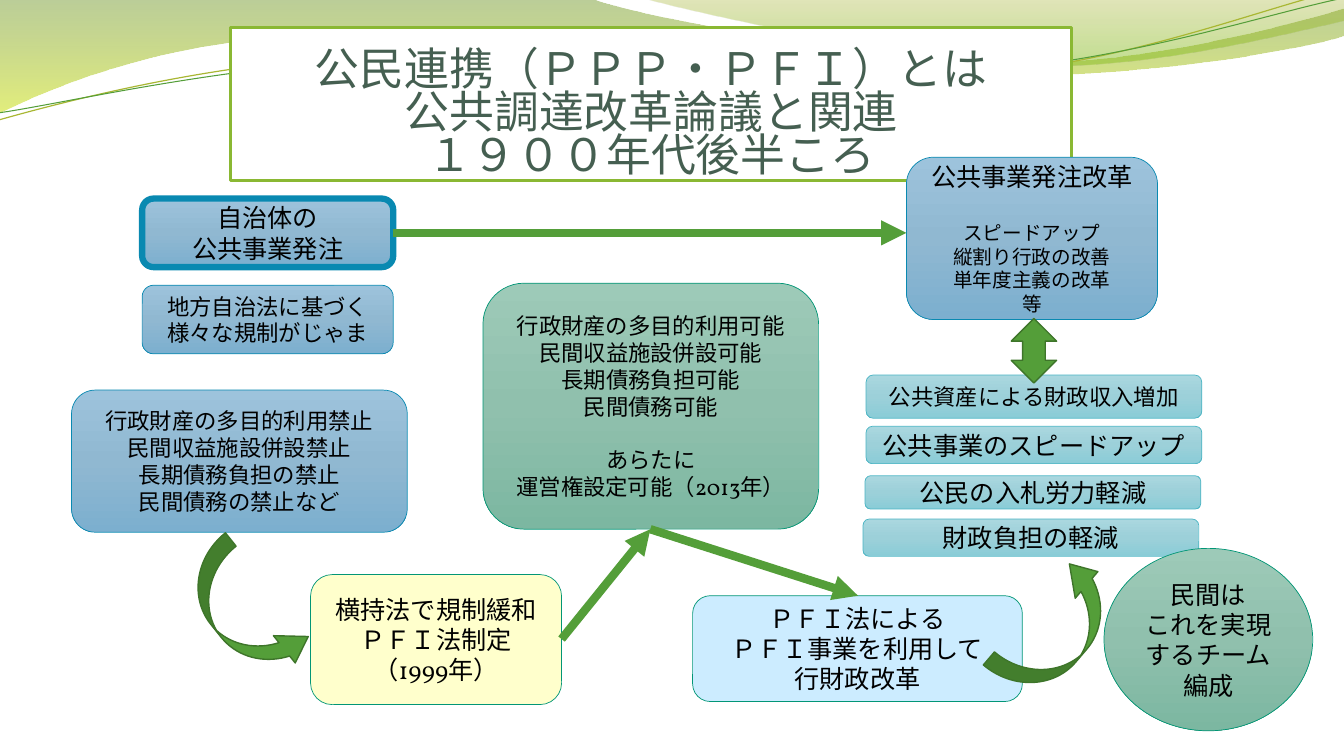
from math import cos, radians, sin

from lxml.etree import SubElement
from pptx import Presentation
from pptx.dml.color import RGBColor
from pptx.enum.shapes import MSO_CONNECTOR, MSO_SHAPE as Shape
from pptx.enum.text import MSO_ANCHOR as Anchor, PP_ALIGN as Align
from pptx.oxml.ns import qn
from pptx.util import Inches, Pt

COLORS = {
    "black": "000000", "white": "FFFFFF", "title": "455F51", "lime": "8AB833",
    "blue": "0989B1", "teal": "029676", "aqua": "4AB5C4", "yellow": "FFFFCC",
    "sky": "CCECFF", "arrow": "549E39", "arrow edge": "3E752A", "olive": "A9B733",
}
# Gradient stops: position %, colour, opacity %
GRADIENTS = {
    "blue fade": [(0, "9DC3DC", 100), (50, "90B8D1", 100), (100, "7CAFCF", 100)],
    "green fade": [(0, "9DCAB8", 100), (50, "90C0AD", 100), (100, "7CB7A1", 100)],
    "aqua fade": [(0, "AAD7DF", 100), (50, "9CD0D9", 100), (100, "8ACCD7", 100)],
    "wave": [(0, "69921C", 45), (100, "CCE10F", 55)],
    "right wave": [(0, "9BAA1A", 30), (80, "81BA16", 45)],
}
BODY_FONT, CJK_FONT = "Vollkorn", "Noto Sans CJK JP"
LINE_PITCH = 1.2

# Decoration: fill, line, line width, tilt, centre, start, then moves
# (one point is a straight edge, three points are a curve)
WAVES = [
    ("wave", None, 0, 0, (6.66, 0.56), (0, 0), [
        [(5.87, -0.01)], [(6.34, 0.17), (8.84, 0.63), (10.11, 0.63)],
        [(11.37, 0.63), (12.77, 0.26), (13.33, 0.09)], [(13.34, 0.36)],
        [(13.11, 0.44), (11.59, 0.76), (9.94, 0.75)],
        [(8.29, 0.75), (5.09, 0.28), (3.43, 0.34)],
        [(1.72, 0.36), (0.61, 0.83), (-0.02, 1.13)]]),
    ("right wave", None, 0, 0, (9.85, 0.34), (6.38, -0.01), [
        [(6.79, 0.11), (9.09, 0.62), (10.25, 0.65)],
        [(11.4, 0.69), (12.82, 0.32), (13.33, 0.21)], [(13.33, 0)]]),
    (None, "olive", 0.85, -2.7, (6.65, 0.58), (-0.01, 1.19), [
        [(0.63, 1.01), (2.1, 0.62), (3.69, 0.55)],
        [(5.27, 0.48), (7.89, 0.87), (9.49, 0.76)],
        [(11.1, 0.66), (12.51, 0.08), (13.3, -0.1)]]),
    (None, "arrow", 0.75, -2.7, (6.67, 0.59), (-0.01, 1.12), [
        [(0.62, 1.03), (2.18, 0.66), (3.77, 0.59)],
        [(5.37, 0.53), (7.96, 0.82), (9.55, 0.72)],
        [(11.14, 0.62), (12.55, 0.14), (13.33, -0.02)]]),
]
TITLE = "公民連携（ＰＰＰ・ＰＦＩ）とは\v公共調達改革論議と関連\v１９００年代後半ころ"

# Boxes: place, fill, line, line width, groups of (size, lines, space before)
BOXES = [
    ((1.41, 1.97, 2.49, 0.68), "blue fade", "blue", 4.5,
     [(18, ["自治体の", "公共事業発注"], 0)]),
    ((1.41, 2.83, 2.49, 0.68), "blue fade", "blue", 0.5,
     [(16, ["地方自治法に基づく", "様々な規制がじゃま"], 0)]),
    ((0.71, 3.87, 3.33, 1.41), "blue fade", "blue", 0.5,
     [(16, ["行政財産の多目的利用禁止", "民間収益施設併設禁止",
            "長期債務負担の禁止", "民間債務の禁止など"], 0)]),
    ((3.08, 5.7, 2.49, 1.29), "yellow", "teal", 0.5,
     [(18, ["横持法で規制緩和", "ＰＦＩ法制定", "（1999年）"], 0)]),
    ((4.79, 2.81, 3.33, 2.44), "green fade", "teal", 0.5,
     [(16, ["行政財産の多目的利用可能", "民間収益施設併設可能",
            "長期債務負担可能", "民間債務可能"], 0),
      (16, ["あらたに", "運営権設定可能（2013年）"], 19)]),
    ((6.87, 5.91, 3.27, 1.05), "sky", "teal", 0.5,
     [(18, ["ＰＦＩ法による", "ＰＦＩ事業を利用して", "行財政改革"], 0)]),
    ((8.56, 5.15, 3.33, 0.37), "aqua fade", "aqua", 0.5, [(18, ["財政負担の軽減"], 0)]),
    ((8.58, 4.72, 3.33, 0.33), "aqua fade", "aqua", 0.5, [(18, ["公民の入札労力軽減"], 0)]),
    ((8.59, 4.23, 3.33, 0.37), "aqua fade", "aqua", 0.5,
     [(18, ["公共事業のスピードアップ"], 0)]),
    ((8.59, 3.72, 3.33, 0.43), "aqua fade", "aqua", 0.5,
     [(16, ["公共資産による財政収入増加"], 0)]),
    ((8.99, 1.56, 2.49, 1.61), "blue fade", "blue", 0.5,
     [(18, ["公共事業発注改革"], 0),
      (14, ["スピードアップ", "縦割り行政の改善", "単年度主義の改革", "等"], 21)]),
]
TEAM = ((10.95, 5.44, 2.07, 1.81), "green fade", "teal", 0.5,
        [(18, ["民間は", "これを実現するチーム", "編成"], 0)])
CONNECTORS = [((5.57, 6.34), (6.45, 5.25)), ((6.45, 5.25), (8.51, 5.91)),
              ((3.9, 2.31), (8.99, 2.31))]
# Block arrows: preset, place, rotation, adjustments
CURVE = (0.25, 0.51, 0.39)
BLOCK_ARROWS = [
    (Shape.CURVED_UP_ARROW, (1.69, 5.74, 1.49, 0.68), 51.4, CURVE),
    (Shape.CURVED_UP_ARROW, (9.75, 5.91, 1.49, 0.68), 310.4, CURVE),
    (Shape.UP_DOWN_ARROW, (10.03, 3.16, 0.45, 0.64), 0, (0.3, 0.5)),
]


def color(name):
    return RGBColor.from_string(COLORS[name])


def paint(shape, fill, line, width):
    shape.shadow.inherit = False
    if fill in GRADIENTS:
        shape.fill.gradient()
        shape.fill.gradient_angle = 270
        stops = shape._element.spPr.find(qn("a:gradFill")).find(qn("a:gsLst"))
        for stop in list(stops):
            stops.remove(stop)
        for position, tone, opacity in GRADIENTS[fill]:
            stop = SubElement(stops, qn("a:gs"), pos=str(position * 1000))
            tint = SubElement(stop, qn("a:srgbClr"), val=tone)
            if opacity < 100:
                SubElement(tint, qn("a:alpha"), val=str(opacity * 1000))
    elif fill:
        shape.fill.solid()
        shape.fill.fore_color.rgb = color(fill)
    else:
        shape.fill.background()
    if line:
        shape.line.color.rgb = color(line)
        shape.line.width = Pt(width)
    else:
        shape.line.fill.background()


def style(para, size, font, tone, pitch):
    para.alignment = Align.CENTER
    para.line_spacing = Pt(round(size * pitch, 1))
    para.font.size = Pt(size)
    para.font.color.rgb = color(tone)
    para.font.name = font
    defaults = para._p.get_or_add_pPr().find(qn("a:defRPr"))
    SubElement(defaults, qn("a:ea"), typeface=CJK_FONT)


def add_preset(page, preset, place, fill, line, width):
    shape = page.shapes.add_shape(preset, *map(Inches, place))
    paint(shape, fill, line, width)
    return shape


def add_box(page, preset, place, fill, line, width, groups):
    frame = add_preset(page, preset, place, fill, line, width).text_frame
    frame.word_wrap = True
    frame.vertical_anchor = Anchor.MIDDLE
    para = None
    for size, lines, gap in groups:
        for index, text in enumerate(lines):
            para = frame.add_paragraph() if para else frame.paragraphs[0]
            para.text = text
            style(para, size, BODY_FONT, "black", LINE_PITCH)
            if gap and index == 0:
                para.space_before = Pt(gap)


def add_wave(page, fill, line, width, tilt, centre, start, moves):
    turn = radians(-tilt)

    def level(point):
        dx, dy = point[0] - centre[0], point[1] - centre[1]
        return (Inches(centre[0] + dx * cos(turn) - dy * sin(turn)),
                Inches(centre[1] + dx * sin(turn) + dy * cos(turn)))

    builder = page.shapes.build_freeform(*level(start))
    builder.add_line_segments([level(p) for move in moves for p in move], close=bool(fill))
    shape = builder.convert_to_shape()
    # Join each three points of a curve into one Bézier segment
    edges = iter(list(shape._element.iter(qn("a:lnTo"))))
    for move in moves:
        first, *others = [next(edges) for _ in move]
        if others:
            curve = SubElement(first.getparent(), qn("a:cubicBezTo"))
            first.addprevious(curve)
            for edge in (first, *others):
                curve.append(edge[0])
                edge.getparent().remove(edge)
    shape.rotation = tilt
    paint(shape, fill, line, width)


def add_arrow(page, start, end):
    arrow = page.shapes.add_connector(MSO_CONNECTOR.STRAIGHT, *map(Inches, start + end))
    arrow.line.color.rgb = color("arrow")
    arrow.line.width = Pt(6)
    SubElement(arrow.line._get_or_add_ln(), qn("a:tailEnd"), type="triangle")
    SubElement(arrow._element.spPr, qn("a:effectLst"))


def main():
    deck = Presentation()
    deck.slide_width, deck.slide_height = Inches(13.33), Inches(7.5)
    page = deck.slides.add_slide(deck.slide_layouts[6])
    for wave in WAVES:
        add_wave(page, *wave)

    # Title
    title = add_preset(page, Shape.RECTANGLE, (2.29, 0.27, 8.34, 1.52), "white", "lime", 2.25)
    frame = title.text_frame
    frame.word_wrap = True
    frame.vertical_anchor = Anchor.BOTTOM
    frame.margin_left = frame.margin_right = frame.margin_bottom = 0
    frame.text = TITLE
    style(frame.paragraphs[0], 32, CJK_FONT, "title", 0.96)

    # Boxes, arrows and the team circle in front
    for box in BOXES:
        add_box(page, Shape.ROUNDED_RECTANGLE, *box)
    for start, end in CONNECTORS:
        add_arrow(page, start, end)
    for preset, place, rotation, adjustments in BLOCK_ARROWS:
        arrow = add_preset(page, preset, place, "arrow", "arrow edge", 1)
        arrow.rotation = rotation
        for index, value in enumerate(adjustments):
            arrow.adjustments[index] = value
    add_box(page, Shape.OVAL, *TEAM)
    deck.save("out.pptx")


if __name__ == "__main__":
    main()
